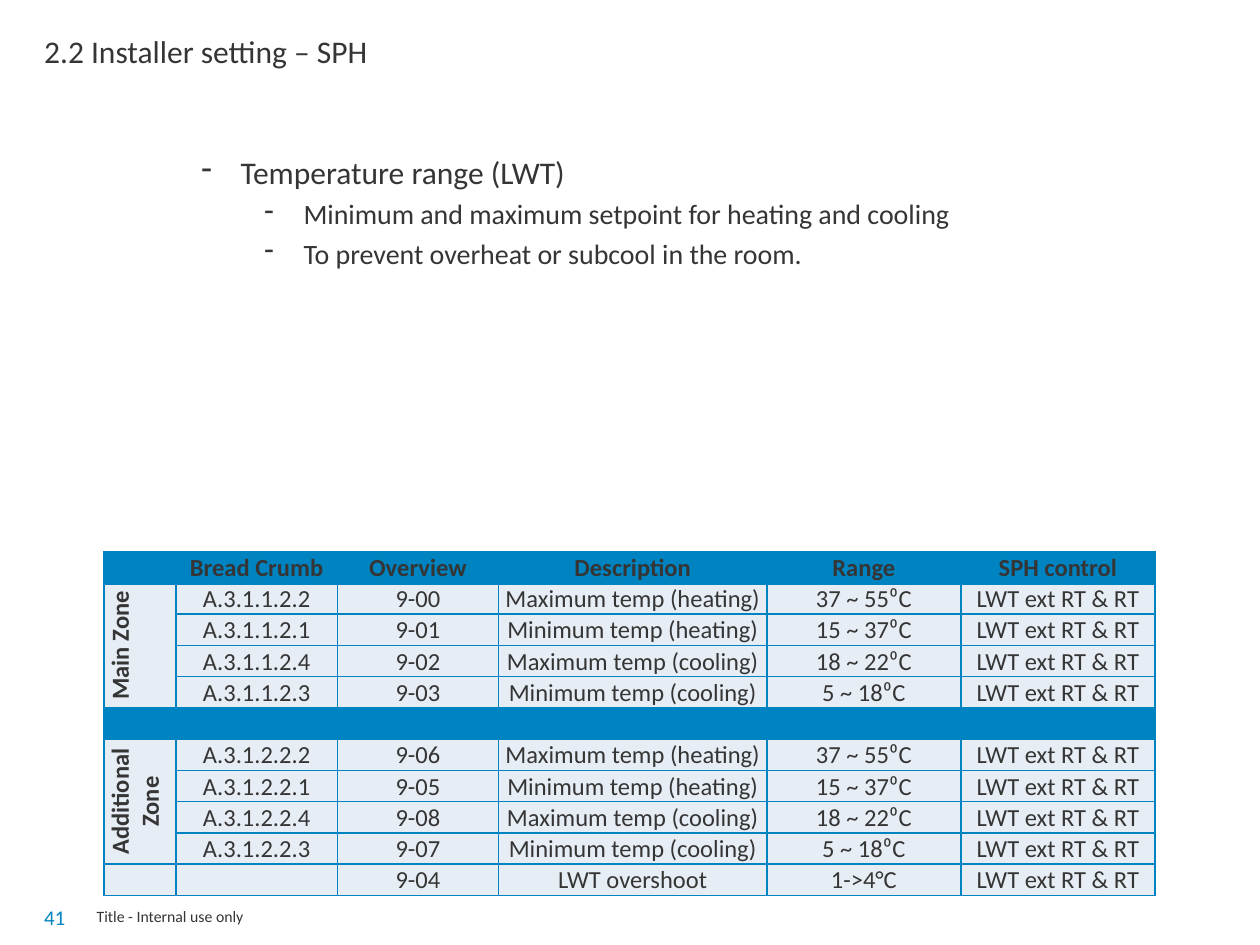
from lxml import etree
from pptx import Presentation
from pptx.dml.color import RGBColor
from pptx.enum.text import MSO_ANCHOR, PP_ALIGN
from pptx.oxml.ns import qn
from pptx.util import Cm, Pt

MIDDLE, TOP = MSO_ANCHOR.MIDDLE, MSO_ANCHOR.TOP
CENTER = PP_ALIGN.CENTER
FACE = "Calibri"
COLORS = {"text": "353535", "blue": "0083C1", "pale": "E7EDF4"}

HEAD = ["", "Bread Crumb", "Overview", "Description", "Range", "SPH control"]
CONTROL = "LWT ext RT & RT"
LIMITS = [
    ("Maximum temp (heating)", "37 ~ 55⁰C"),
    ("Minimum temp (heating)", "15 ~ 37⁰C"),
    ("Maximum temp (cooling)", "18 ~ 22⁰C"),
    ("Minimum temp (cooling)", "5 ~ 18⁰C"),
]
ORDER = (2, 1, 4, 3)
ZONES = [
    ("Main Zone", "A.3.1.1.2", ("9-00", "9-01", "9-02", "9-03")),
    ("Additional\nZone", "A.3.1.2.2", ("9-06", "9-05", "9-08", "9-07")),
]
WIDTHS = (1.45, 3.25, 3.25, 5.41, 3.91, 3.91)
ROW = 0.63
INSETS = {"margin_left": Cm(0.1), "margin_right": Cm(0.1),
          "margin_top": Cm(0.03), "margin_bottom": 0}


def rgb(name):
    return RGBColor.from_string(COLORS[name])


def set_font(font, size, color="text", bold=False):
    formats = {"name": FACE, "size": Pt(size), "bold": bold}
    for key, value in formats.items():
        setattr(font, key, value)
    font.color.rgb = rgb(color)


def add_dash(para, left):
    """Give the paragraph a hanging dash; left is where its text starts."""
    props = para._p.get_or_add_pPr()
    props.set("marL", str(Cm(left)))
    props.set("indent", str(Cm(-0.79)))
    etree.SubElement(props, qn("a:buChar"), char="-")


def add_text(slide, box, lines, anchor=TOP, color="text"):
    """Add a text box; each line is (text, size, level), level None is plain."""
    frame = slide.shapes.add_textbox(*map(Cm, box)).text_frame
    frame.word_wrap = True
    frame.vertical_anchor = anchor
    for i, (text, size, level) in enumerate(lines):
        para = frame.add_paragraph() if i else frame.paragraphs[0]
        if i:
            para.space_before = Pt(size * 0.2)
        if level is not None:
            para.level = level
            add_dash(para, 0.79 + 1.27 * level)
        run = para.add_run()
        run.text = text
        set_font(run.font, size, color)


def add_lines(cell, bottom):
    props = cell._tc.get_or_add_tcPr()
    for side, width in (("L", 1), ("R", 1), ("T", 1), ("B", bottom)):
        line = etree.SubElement(props, qn(f"a:ln{side}"), w=str(Pt(width)))
        fill = etree.SubElement(line, qn("a:solidFill"))
        etree.SubElement(fill, qn("a:srgbClr"), val=COLORS["blue"])


def fill_cell(cell, text, back, bold=False, bottom=1):
    add_lines(cell, bottom)
    cell.fill.solid()
    cell.fill.fore_color.rgb = rgb(back)
    cell.vertical_anchor = MIDDLE
    for key, value in INSETS.items():
        setattr(cell, key, value)
    cell.text = text
    for para in cell.text_frame.paragraphs:
        para.alignment = CENTER
        for run in para.runs:
            set_font(run.font, 14, bold=bold)
        if not para.runs:
            etree.SubElement(para._p, qn("a:endParaRPr"), sz="1400")


def list_rows():
    blank = [""] * len(HEAD)
    rows = [HEAD]
    for zone, crumb, codes in ZONES:
        if len(rows) > 1:
            rows.append(blank)
        for i, (label, span) in enumerate(LIMITS):
            rows.append(["" if i else zone, f"{crumb}.{ORDER[i]}",
                         codes[i], label, span, CONTROL])
    rows.append(["", "", "9-04", "LWT overshoot", "1->4°C", CONTROL])
    return rows


def add_grid(slide):
    rows = list_rows()
    table = slide.shapes.add_table(
        len(rows), len(HEAD), Cm(2.1), Cm(11.12),
        Cm(sum(WIDTHS)), Cm(ROW * len(rows))).table
    table.first_row = table.horz_banding = False
    for col, width in zip(table.columns, WIDTHS):
        col.width = Cm(width)
    for r, texts in enumerate(rows):
        table.rows[r].height = Cm(ROW)
        back = "pale" if any(texts) and r else "blue"
        for c, text in enumerate(texts):
            fill_cell(table.cell(r, c), text, back,
                      bold=r == 0 or c == 0, bottom=1 if r else 3)
    gap = 1 + len(LIMITS)
    table.cell(gap, 0).merge(table.cell(gap, 4))
    for top in (1, gap + 1):
        zone = table.cell(top, 0)
        zone.merge(table.cell(top + len(LIMITS) - 1, 0))
        zone._tc.get_or_add_tcPr().set("vert", "vert270")


def main():
    deck = Presentation()
    deck.slide_width, deck.slide_height = Cm(25.4), Cm(19.05)
    slide = deck.slides.add_slide(deck.slide_layouts[6])
    add_text(slide, (1.7, 17.96, 8.05, 1.02),
             [("Title - Internal use only", 9, None)], MIDDLE)
    add_text(slide, (0.64, 17.78, 1.07, 1.4), [("41", 12, None)],
             MIDDLE, "blue")
    add_text(slide, (0.64, 0.53, 24.08, 1.65),
             [("2.2 Installer setting – SPH", 18, None)])
    add_text(slide, (3.81, 2.97, 17.78, 13.54), [
        ("Temperature range (LWT)", 18, 0),
        ("Minimum and maximum setpoint for heating and cooling", 16, 1),
        ("To prevent overheat or subcool in the room.", 16, 1),
    ])
    add_grid(slide)
    deck.save("out.pptx")


if __name__ == "__main__":
    main()
